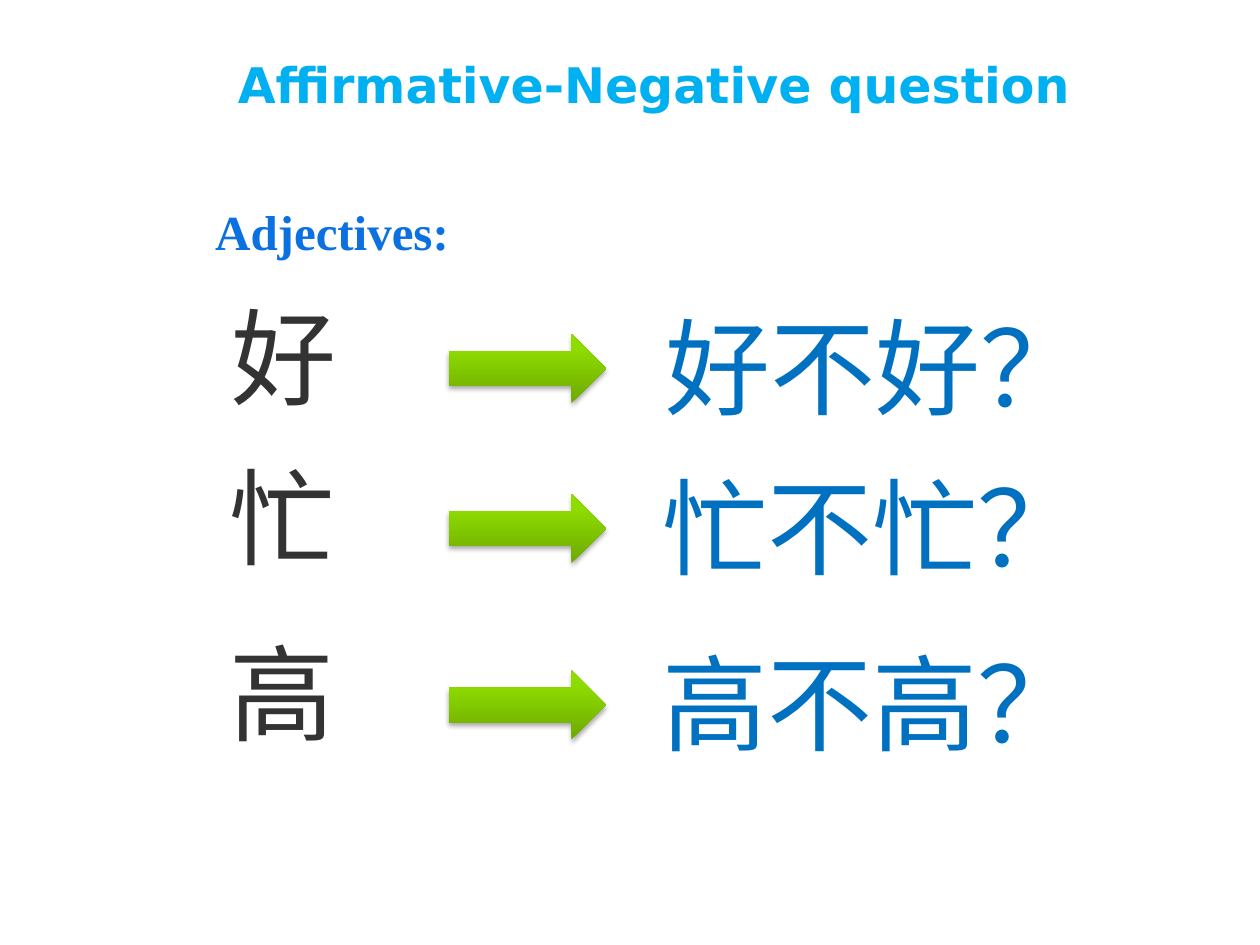
"""Build a slide on affirmative-negative questions with adjectives."""
import copy
from dataclasses import dataclass

import pptx
import pptx.dml.color
import pptx.enum.shapes
import pptx.enum.text
import pptx.oxml
import pptx.oxml.ns
import pptx.util
from pptx.util import Inches


@dataclass(frozen=True)
class Theme:
    title_font: str = "DejaVu Sans"
    body_font: str = "Times New Roman"
    title: str = "00B0F0"
    heading: str = "0C71E0"
    adjective: str = "333333"
    question: str = "0070C0"
    arrow_stops: tuple = ((0, "6DA901"), (0.8, "8EDC01"), (1, "8FDE00"))
    heading_size: int = 28
    example_size: int = 60


@dataclass(frozen=True)
class Example:
    adjective: str
    left: float
    top: float


THEME = Theme()
EXAMPLES = (
    Example("好", 1.74, 2.27),
    Example("忙", 1.72, 3.54),
    Example("高", 1.72, 4.94),
)
QUESTION_SHIFT = (3.44, 0.08)
ARROW_LEFT, ARROW_DROP = 3.56, 0.38
SHADOW = (
    f'<a:outerShdw {pptx.oxml.ns.nsdecls("a")} blurRad="39400" dist="22900" '
    'dir="5400000" rotWithShape="0"><a:srgbClr val="000000">'
    '<a:alpha val="35000"/></a:srgbClr></a:outerShdw>'
)


def rgb(value: str) -> pptx.dml.color.RGBColor:
    """Turn a hex string into a colour."""
    return pptx.dml.color.RGBColor.from_string(value)


def write(box, text: str, face: str, size: int, color: str, bold: bool):
    """Write one formatted paragraph and return it."""
    para = box.text_frame.paragraphs[0]
    para.text = text
    para.font.name = face
    para.font.size = pptx.util.Pt(size)
    para.font.bold = bold
    para.font.color.rgb = rgb(color)
    return para


def add_title(page) -> None:
    """Place the title."""
    box = page.shapes.title
    box.left, box.top = Inches(0.58), Inches(0.33)
    box.width, box.height = Inches(9.08), Inches(0.67)
    box.text_frame.vertical_anchor = pptx.enum.text.MSO_ANCHOR.MIDDLE
    para = write(box, " Affirmative-Negative question", THEME.title_font,
                 THEME.heading_size, THEME.title, True)
    para.alignment = pptx.enum.text.PP_ALIGN.CENTER


def add_heading(page) -> None:
    """Place the heading above the examples."""
    box = page.shapes.add_textbox(Inches(1.61), Inches(1.55), Inches(2.83), Inches(0.57))
    box.text_frame.word_wrap = True
    write(box, "Adjectives:", THEME.body_font, THEME.heading_size, THEME.heading, True)


def add_characters(page, text: str, left: float, top: float, width: float, color: str) -> None:
    """Place a line of large characters."""
    box = page.shapes.add_textbox(Inches(left), Inches(top), Inches(width), Inches(1.1))
    box.text_frame.word_wrap = False
    box.text_frame.auto_size = pptx.enum.text.MSO_AUTO_SIZE.SHAPE_TO_FIT_TEXT
    box.text_frame.vertical_anchor = pptx.enum.text.MSO_ANCHOR.MIDDLE
    write(box, text, THEME.body_font, THEME.example_size, color, False)


def add_arrow(page, top: float) -> None:
    """Place a green arrow with a soft shadow."""
    arrow = page.shapes.add_shape(
        pptx.enum.shapes.MSO_SHAPE.RIGHT_ARROW,
        Inches(ARROW_LEFT), Inches(top), Inches(1.25), Inches(0.55))
    arrow.line.fill.background()
    arrow.fill.gradient()
    arrow.fill.gradient_angle = 90
    properties = arrow._element.spPr
    stops = properties.find(".//" + pptx.oxml.ns.qn("a:gsLst"))
    stops.append(copy.deepcopy(stops[-1]))
    for stop, (position, color) in zip(arrow.fill.gradient_stops, THEME.arrow_stops):
        stop.position = position
        stop.color.rgb = rgb(color)
    arrow.shadow.inherit = False
    effects = properties.find(pptx.oxml.ns.qn("a:effectLst"))
    effects.append(pptx.oxml.parse_xml(SHADOW))


def add_example(page, example: Example) -> None:
    """Place an adjective, its arrow and its question."""
    word = example.adjective
    add_characters(page, word, example.left, example.top, 1.03, THEME.adjective)
    add_arrow(page, example.top + ARROW_DROP)
    across, down = QUESTION_SHIFT
    add_characters(page, f"{word}不{word}？", example.left + across,
                   example.top + down, 3.53, THEME.question)


def main() -> None:
    """Build and save the deck."""
    deck = pptx.Presentation()
    deck.slide_width, deck.slide_height = Inches(10), Inches(7.5)
    page = deck.slides.add_slide(deck.slide_layouts[5])
    add_title(page)
    add_heading(page)
    for example in EXAMPLES:
        add_example(page, example)
    deck.save("out.pptx")


if __name__ == "__main__":
    main()
